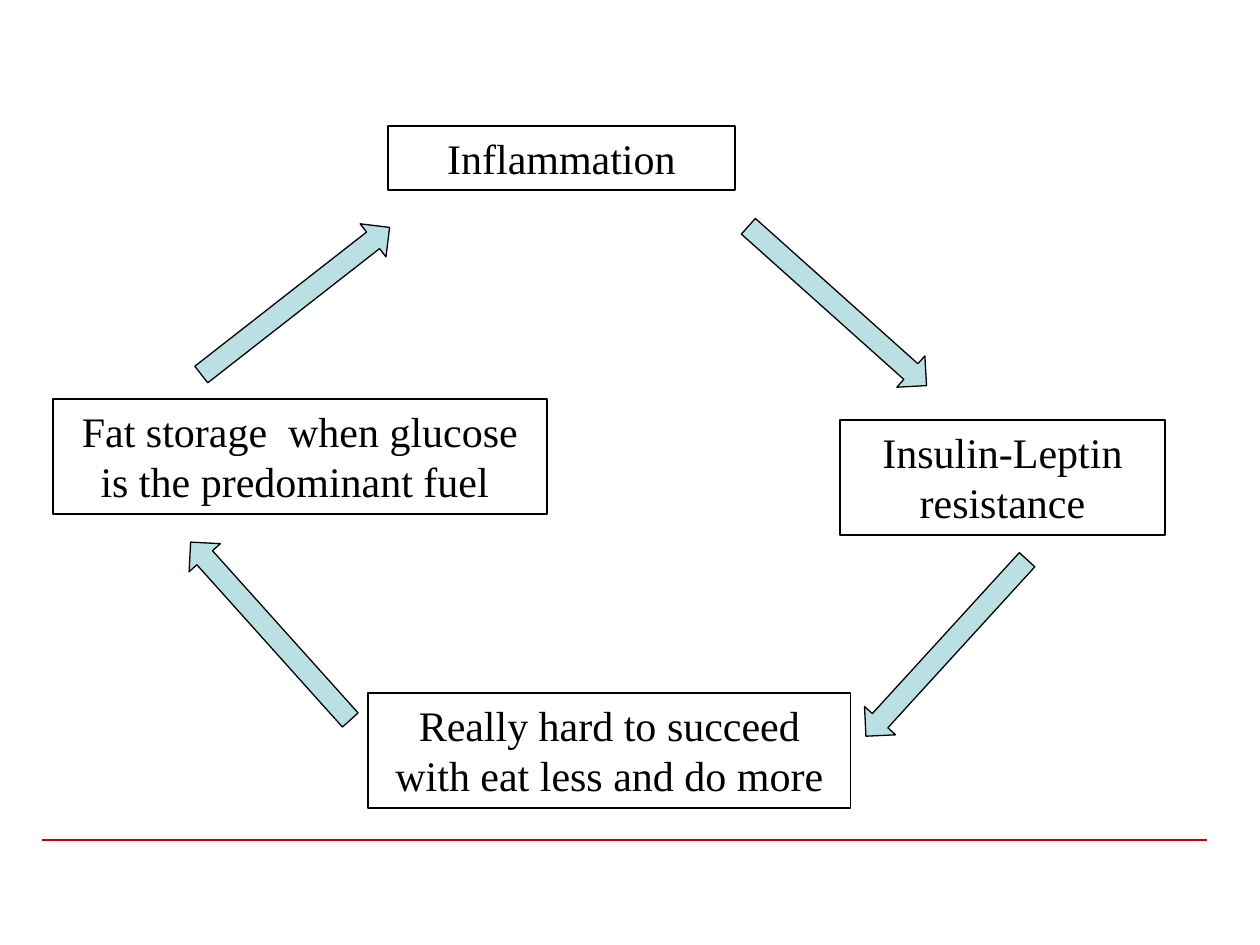
from lxml import etree
from pptx import Presentation
from pptx.dml.color import RGBColor
from pptx.enum import shapes, text
from pptx.oxml.ns import qn
from pptx.util import Pt

PX = 914400 // 126  # EMU in one px


def px(*lengths):
    return [length * PX for length in lengths]


def color(hex_string):
    return RGBColor.from_string(hex_string)


def write(frame, words, font="Times New Roman", size=24, ink="000000",
          align=text.PP_ALIGN.CENTER):
    paragraph = frame.paragraphs[0]
    paragraph.alignment = align
    run = paragraph.add_run()
    run.text = words
    run.font.name = font
    run.font.size = Pt(size)
    run.font.color.rgb = color(ink)


class CycleSlide:
    INK, ARROW, RULE = "000000", "BBE0E3", "CC0000"
    LINE_WIDTH = 0.75
    ARROW_SIZE = (239, 42)

    def __init__(self, deck):
        self.shapes = deck.slides.add_slide(deck.slide_layouts[6]).shapes

    def outline(self, line, ink):
        line.color.rgb = color(ink)
        line.width = Pt(self.LINE_WIDTH)

    def rule(self, left, right, y):
        rule = self.shapes.add_connector(
            shapes.MSO_CONNECTOR.STRAIGHT, *px(left, y, right, y))
        self.outline(rule.line, self.RULE)
        etree.SubElement(rule._element.spPr, qn("a:effectLst"))

    def stage(self, words, left, top, width, height):
        stage = self.shapes.add_textbox(*px(left, top, width, height))
        self.outline(stage.line, self.INK)
        frame = stage.text_frame
        frame.word_wrap = True
        frame.auto_size = text.MSO_AUTO_SIZE.SHAPE_TO_FIT_TEXT
        write(frame, words)

    def arrow(self, left, top, angle):
        arrow = self.shapes.add_shape(
            shapes.MSO_SHAPE.RIGHT_ARROW, *px(left, top, *self.ARROW_SIZE))
        arrow.rotation = angle
        arrow.shadow.inherit = False
        arrow.fill.solid()
        arrow.fill.fore_color.rgb = color(self.ARROW)
        self.outline(arrow.line, self.INK)


def main():
    deck = Presentation()
    deck.slide_width, deck.slide_height = px(1260, 945)
    cycle = CycleSlide(deck)

    # Footer rule
    cycle.rule(42, 1207, 840)

    # Stages of the cycle
    cycle.stage("Inflammation", 388, 126, 347, 64)
    cycle.stage("Insulin-Leptin resistance", 840, 420, 325, 115)
    cycle.stage("Fat storage  when glucose is the predominant fuel ",
                53, 399, 494, 115)
    cycle.stage("Really hard to succeed with eat less and do more",
                368, 693, 483, 115)

    # Arrows from each stage to the next
    for left, top, angle in [(718, 285, 41.8), (151, 610, 228.1),
                             (176, 280, 322), (827, 627, 132.4)]:
        cycle.arrow(left, top, angle)

    deck.save("out.pptx")


if __name__ == "__main__":
    main()
